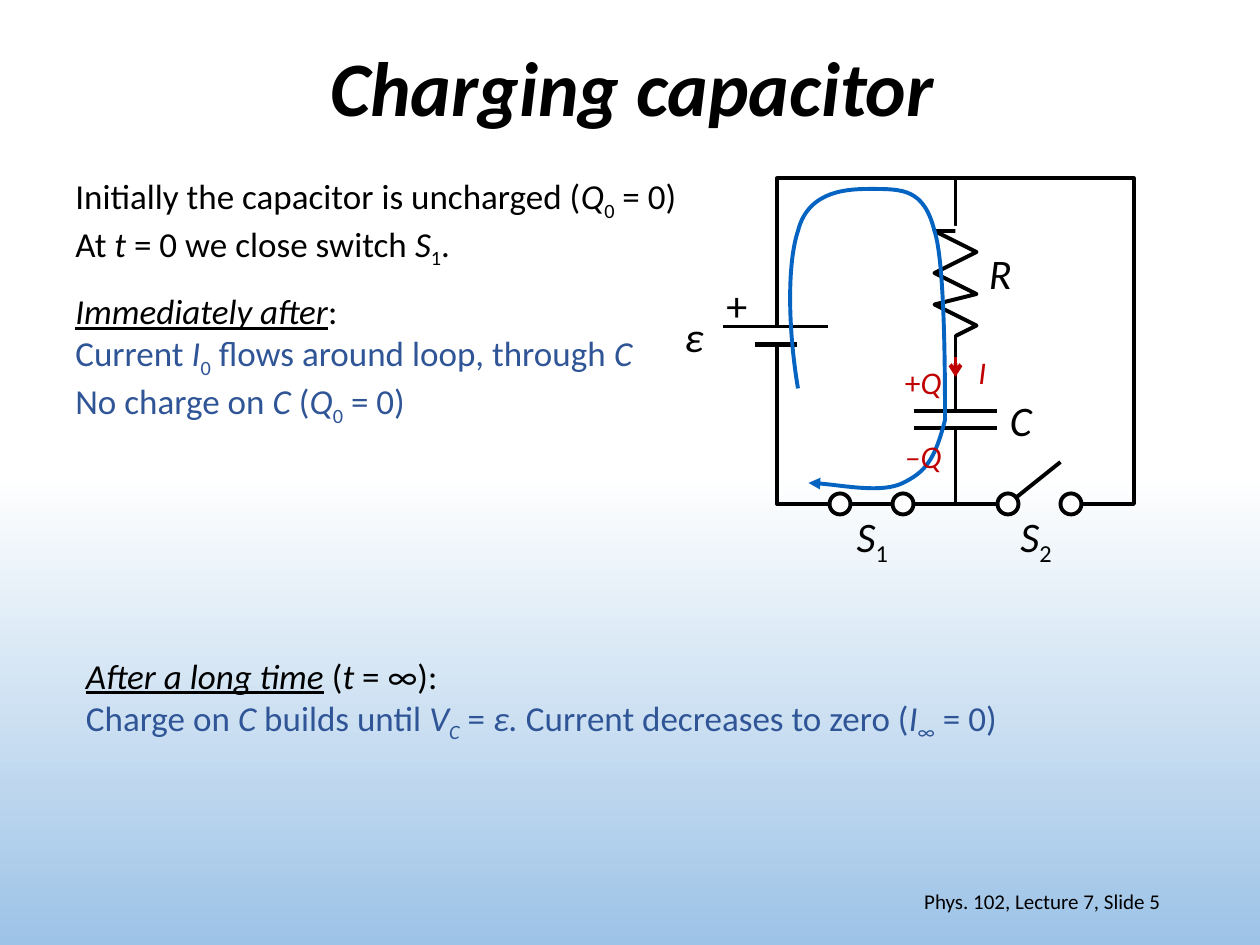
"""Build the charging capacitor slide on a grid of 120 columns by 90 rows."""
from dataclasses import dataclass
from itertools import chain
from typing import NamedTuple

from lxml import etree
from pptx import Presentation
from pptx.dml.color import RGBColor
from pptx.enum.shapes import MSO_CONNECTOR, MSO_SHAPE
from pptx.enum.text import MSO_ANCHOR, MSO_AUTO_SIZE, PP_ALIGN
from pptx.oxml.ns import qn
from pptx.util import Inches, Pt

STRAIGHT = MSO_CONNECTOR.STRAIGHT
RECTANGLE, OVAL = MSO_SHAPE.RECTANGLE, MSO_SHAPE.OVAL
LEFT, CENTER, RIGHT = PP_ALIGN.LEFT, PP_ALIGN.CENTER, PP_ALIGN.RIGHT
TOP, MIDDLE = MSO_ANCHOR.TOP, MSO_ANCHOR.MIDDLE
GROW, FIXED = MSO_AUTO_SIZE.SHAPE_TO_FIT_TEXT, MSO_AUTO_SIZE.NONE

CELL = Inches(10) // 120
WIRE = 2.25
FONT = "Calibri"
COLORS = {"ink": "000000", "paper": "FFFFFF", "sky": "9DC3E6",
          "answer": "2F5597", "charge": "C00000", "loop": "0563C1"}
FORMATS = {
    "plain": {},
    "italic": {"italic": True},
    "heading": {"italic": True, "underline": True},
    "title": {"bold": True, "italic": True},
    "sub": {},
    "italic sub": {"italic": True},
}


class Span(NamedTuple):
    text: str
    style: str = "plain"


class Line(NamedTuple):
    spans: list[Span]
    color: str = "ink"


class Stroke(NamedTuple):
    start: tuple[float, float]
    end: tuple[float, float]
    color: str = "ink"
    width: float = WIRE
    tail: str = ""


class Area(NamedTuple):
    column: float
    row: float
    columns: float
    rows: float


@dataclass
class Label:
    area: Area
    lines: list[Line]
    size: int = 24
    wrap: bool = False
    grow: bool = True
    align: PP_ALIGN = LEFT
    anchor: MSO_ANCHOR = TOP
    spacing: float = 1.0


def grid(*cells: float) -> list[int]:
    """Turn grid cells into slide lengths."""
    return [round(cell * CELL) for cell in cells]


def color(name: str) -> RGBColor:
    """Look up a named colour."""
    return RGBColor.from_string(COLORS[name])


def style_line(shape, name: str, width: float, tail: str = "") -> None:
    """Set colour, width and arrowhead of an outline."""
    shape.line.color.rgb = color(name)
    shape.line.width = Pt(width)
    if tail:
        etree.SubElement(shape.line._get_or_add_ln(), qn("a:tailEnd"), type=tail)


def paint_background(page) -> None:
    """Fade the page from white at the middle to blue at the bottom."""
    fill = page.background.fill
    fill.gradient()
    fill.gradient_angle = 270
    for stop, position, name in zip(fill.gradient_stops, (0.5, 1), ("paper", "sky")):
        stop.position = position
        stop.color.rgb = color(name)


def draw_area(page, kind: MSO_SHAPE, area: Area, outlined: bool, clear: bool) -> None:
    """Draw a shape filled with the page background or with white."""
    shape = page.shapes.add_shape(kind, *grid(*area))
    shape.shadow.inherit = False
    if clear:
        shape.element.set("useBgFill", "1")
    else:
        shape.fill.solid()
        shape.fill.fore_color.rgb = color("paper")
    if outlined:
        style_line(shape, "ink", WIRE)
    else:
        shape.line.fill.background()


def draw_stroke(page, stroke: Stroke) -> None:
    """Draw one straight wire or plate."""
    wire = page.shapes.add_connector(STRAIGHT, *grid(*stroke.start, *stroke.end))
    style_line(wire, stroke.color, stroke.width, stroke.tail)
    etree.SubElement(wire.element.spPr, qn("a:effectLst"))


def draw_trace(page, points: list[tuple[float, float]], name: str,
               curved: bool = False, tail: str = "") -> None:
    """Draw an open polyline, or a curve whose points come in threes."""
    builder = page.shapes.build_freeform(*points[0], scale=CELL)
    builder.add_line_segments(points[1:], close=False)
    shape = builder.convert_to_shape()
    shape.shadow.inherit = False
    shape.fill.background()
    style_line(shape, name, WIRE, tail)
    if curved:
        steps = shape.element.xpath(".//a:lnTo")
        for first, second, third in zip(steps[::3], steps[1::3], steps[2::3]):
            first.tag = qn("a:cubicBezTo")
            for step in (second, third):
                first.append(step[0])
                step.getparent().remove(step)


def draw_label(page, label: Label) -> None:
    """Write a text box of styled spans."""
    box = page.shapes.add_textbox(*grid(*label.area))
    frame = box.text_frame
    frame.word_wrap = label.wrap
    frame.auto_size = GROW if label.grow else FIXED
    frame.vertical_anchor = label.anchor
    for index, line in enumerate(label.lines):
        paragraph = frame.add_paragraph() if index else frame.paragraphs[0]
        paragraph.alignment = label.align
        paragraph.line_spacing = label.spacing
        for text, style in line.spans:
            span = paragraph.add_run()
            span.text = text
            values = {"name": FONT, "size": Pt(label.size)} | FORMATS[style]
            for key, value in values.items():
                setattr(span.font, key, value)
            span.font.color.rgb = color(line.color)
            if style.endswith("sub"):
                span._r.get_or_add_rPr().set("baseline", "-25000")


def symbol(column: float, row: float, columns: float, *spans: Span) -> Label:
    """Describe a large circuit symbol."""
    return Label(Area(column, row, columns, 6), [Line(list(spans))])


def charge(column: float, row: float, columns: float, *spans: Span) -> Label:
    """Describe a small red charge or current mark."""
    return Label(Area(column, row, columns, 4.8), [Line(list(spans), "charge")], 18)


def draw_plates(page, mask: Area, plates: list[Stroke]) -> None:
    """Break a wire and draw two plates across the gap."""
    draw_area(page, RECTANGLE, mask, False, True)
    for plate in plates:
        draw_stroke(page, plate)


def draw_switch(page, column: float, mask: Area, lever: Stroke) -> None:
    """Draw a switch of two contacts and a lever."""
    draw_area(page, RECTANGLE, mask, False, True)
    draw_area(page, OVAL, Area(column + 6, 47, 2, 2), True, False)
    draw_stroke(page, lever)
    draw_area(page, OVAL, Area(column, 47, 2, 2), True, False)


ZIGZAG = [(91, 21.5), *((89 if i % 2 == 0 else 93, 22.35 + 1.77 * i) for i in range(6)), (91, 32)]
CURVES = [
    [(74.9, 31.1), (74.6, 24.7), (76, 21.5)], [(77.3, 18.2), (81.2, 18), (83.4, 18)],
    [(85.6, 18.1), (88, 18.2), (89, 21.7)], [(90, 25.3), (90.2, 35.5), (89.6, 39.5)],
    [(89.2, 43.6), (87.7, 44.6), (85.6, 45.7)], [(83.5, 46.8), (78.7, 46.3), (77, 46)],
]
LOOP = [(75.5, 37.4), *chain.from_iterable(CURVES)]

I, SUB = "italic", "sub"
LABELS = [
    Label(Area(8.5, 0, 103.5, 17.4), [Line([Span("Charging capacitor", "title")])],
          44, True, False, CENTER, MIDDLE, 0.9),
    Label(Area(84.7, 83.4, 27, 4.8), [Line([Span("Phys. 102, Lecture 7, Slide 5")])],
          12, True, False, RIGHT, MIDDLE),
    symbol(68, 26, 4.4, Span("+")), symbol(64, 29, 4.2, Span("ε", I)),
    symbol(93, 23, 4.6, Span("R", I)), symbol(95, 37, 4.6, Span("C", I)),
    symbol(80.4, 48, 5.6, Span("S", I), Span("1", SUB)),
    symbol(96, 48, 5.6, Span("S", I), Span("2", SUB)),
    charge(92, 33, 3.2, Span("I", I)),
    charge(85, 34, 6, Span("+"), Span("Q", I)), charge(85, 41, 6, Span("–Q", I)),
    Label(Area(6, 16, 60.4, 9.2), [
        Line([Span("Initially the capacitor is uncharged ("), Span("Q", I), Span("0", SUB), Span(" = 0)")]),
        Line([Span("At "), Span("t", I), Span(" = 0 we close switch "), Span("S", I),
              Span("1", SUB), Span(".")])], 20),
    Label(Area(6, 27, 57, 13.3), [
        Line([Span("Immediately after", "heading"), Span(":")]),
        Line([Span("Current "), Span("I", I), Span("0", SUB), Span(" flows around loop, through "),
              Span("C", I), Span(" No charge on "), Span("C", I), Span(" ("), Span("Q", I),
              Span("0", SUB), Span(" = 0)")], "answer")], 20, True),
    Label(Area(7, 61.7, 93, 9.2), [
        Line([Span("After a long time", "heading"), Span(" ("), Span("t", I), Span(" = ∞):")]),
        Line([Span("Charge on "), Span("C", I), Span(" builds until "), Span("V", I),
              Span("C", "italic sub"), Span(" = "), Span("ε. ", I),
              Span("Current decreases to zero ("), Span("I", I), Span("∞", SUB),
              Span(" = 0)")], "answer")], 20, True),
]


def main() -> None:
    """Draw the circuit, its labels and the notes beside it."""
    deck = Presentation()
    deck.slide_width, deck.slide_height = grid(120, 90)
    page = deck.slides.add_slide(deck.slide_layouts[6])
    paint_background(page)
    draw_area(page, RECTANGLE, Area(74, 17, 34, 31), True, True)
    draw_stroke(page, Stroke((91, 17), (91, 48)))
    draw_plates(page, Area(68, 31, 11.9, 1.9), [
        Stroke((68.9, 31.1), (78.9, 31.1)), Stroke((71.9, 32.8), (75.9, 32.8), width=3)])
    draw_stroke(page, Stroke((91, 34), (91, 35.9), "charge", tail="arrow"))
    draw_area(page, RECTANGLE, Area(88.8, 21.5, 4.2, 10.4), False, False)
    draw_trace(page, ZIGZAG, "ink")
    draw_switch(page, 79, Area(80, 43, 6, 8), Stroke((85, 48), (80, 48)))
    draw_plates(page, Area(85, 39, 11.9, 1.9), [
        Stroke((87, row), (95, row)) for row in (39.1, 40.8)])
    draw_switch(page, 95, Area(95, 46, 8, 5), Stroke((101, 44), (96, 48)))
    draw_trace(page, LOOP, "loop", curved=True, tail="triangle")
    for label in LABELS:
        draw_label(page, label)
    deck.save("out.pptx")


if __name__ == "__main__":
    main()
